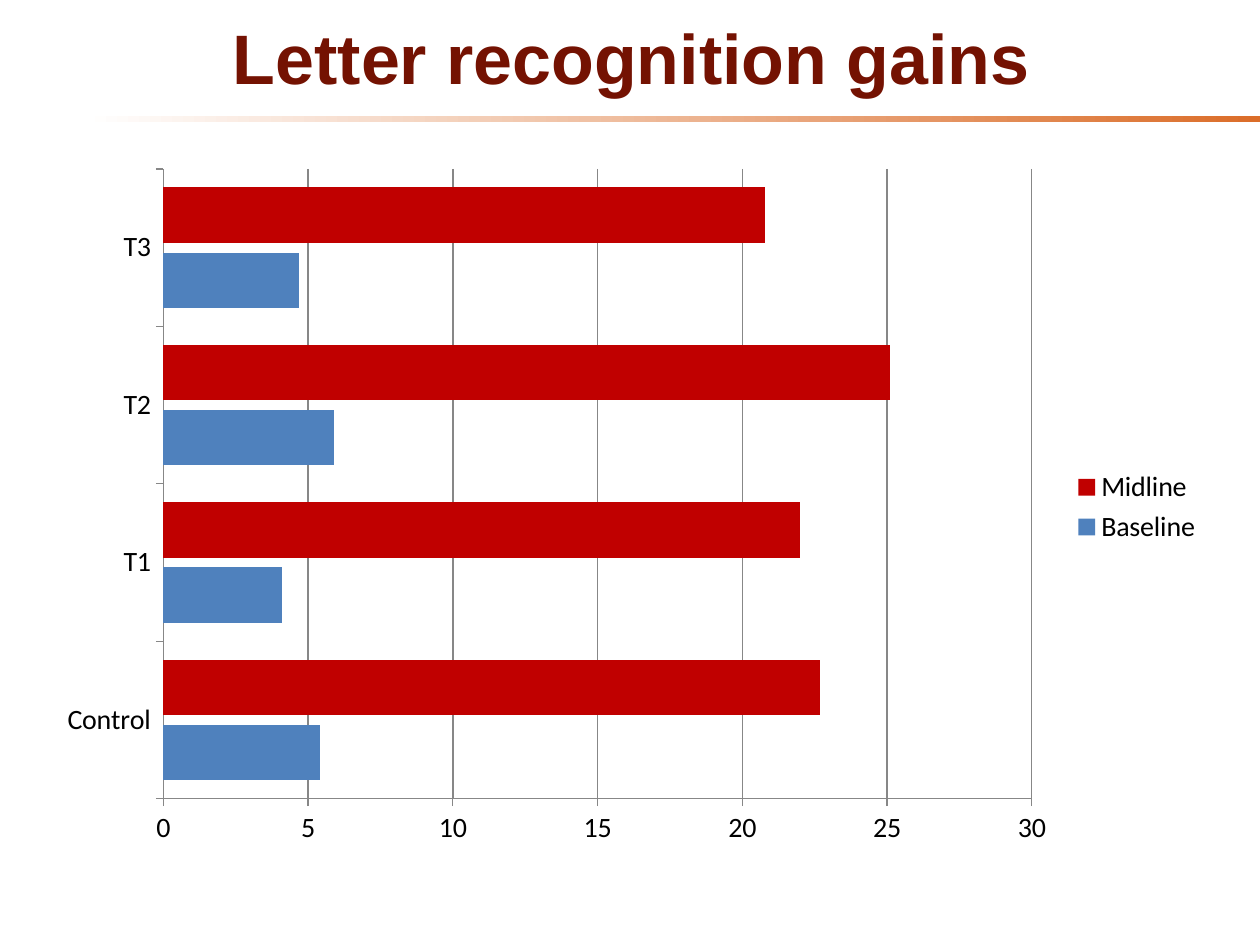
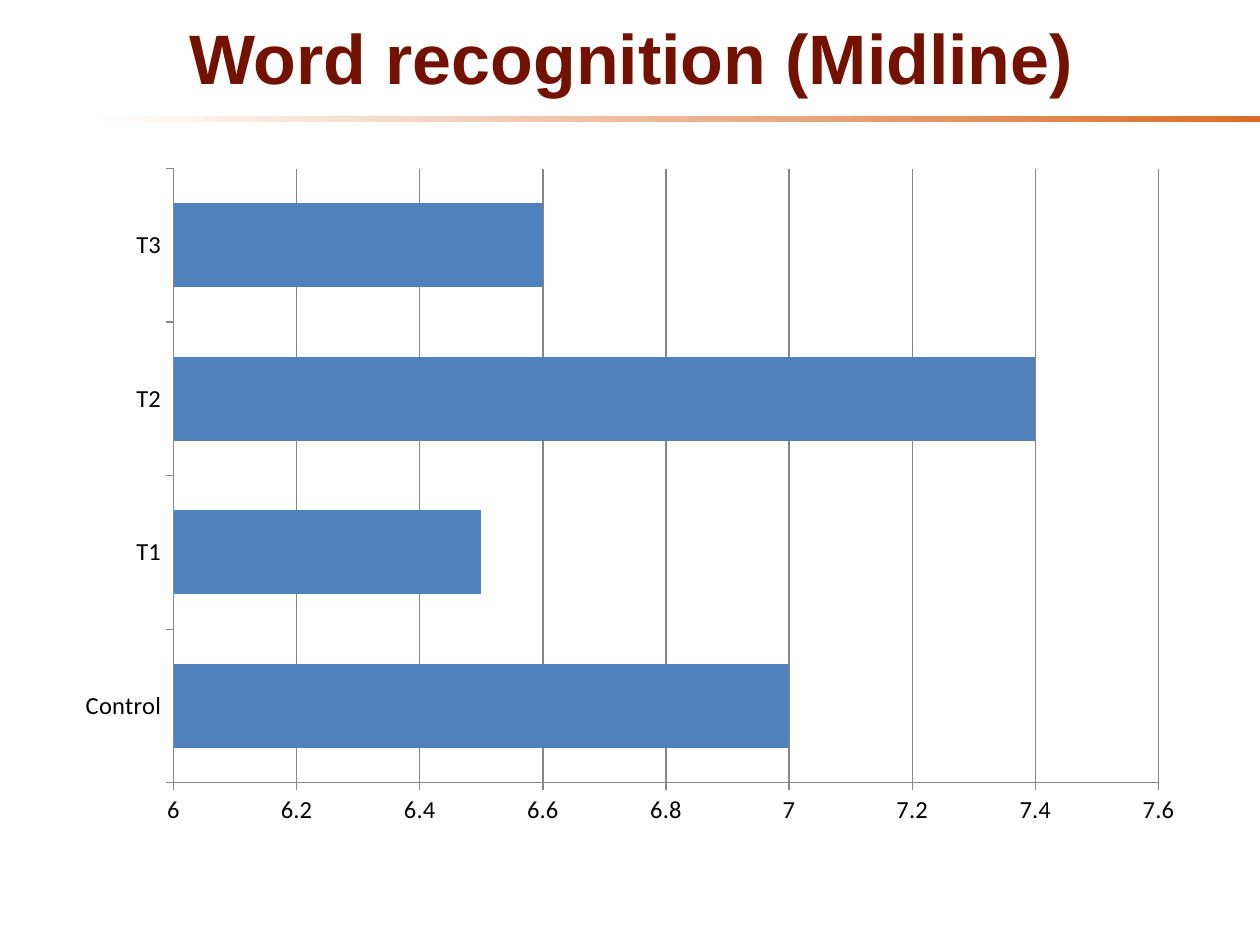
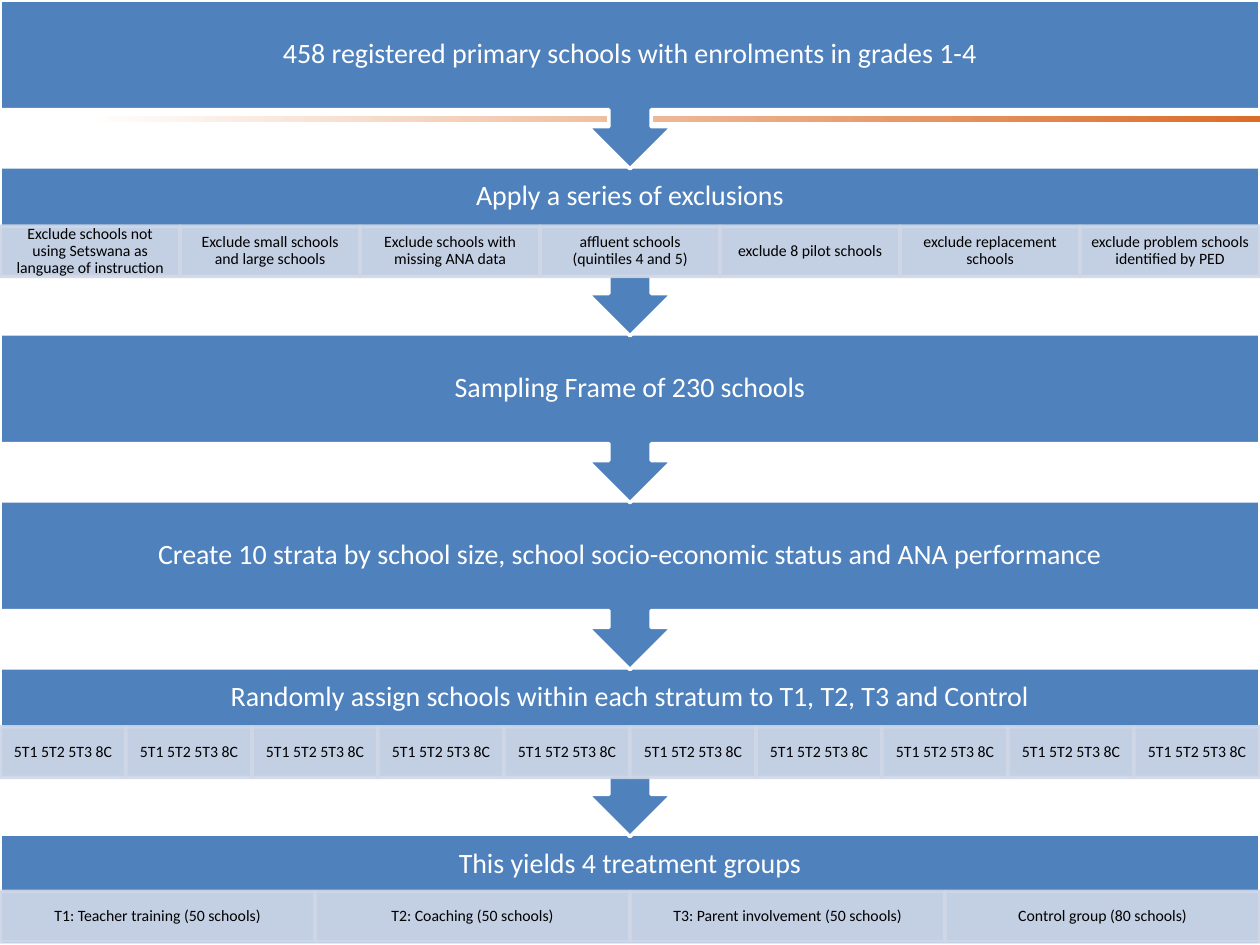
from lxml import etree
from pptx import Presentation
from pptx import util as u
from pptx.chart.data import CategoryChartData
from pptx.dml.color import RGBColor
from pptx.enum import chart as charts, shapes, text
from pptx.oxml.ns import qn

MAROON = RGBColor(0x74, 0x12, 0x02)
ORANGE = RGBColor(0xDB, 0x6D, 0x29)
BLUE = RGBColor(0x4F, 0x81, 0xBD)
PALE_BLUE = RGBColor(0xD0, 0xD8, 0xE8)
RED = RGBColor(0xC0, 0x00, 0x00)
GREY = RGBColor(0x87, 0x87, 0x87)
WHITE = RGBColor(0xFF, 0xFF, 0xFF)
BLACK = RGBColor(0x00, 0x00, 0x00)

SLIDE_WIDTH = 10
STAGE_STEP = 1.325
CALLOUT_HEIGHT = 1.34
BOX_HEIGHT = 0.87
HEADING_HEIGHT = 0.47
CELL_HEIGHT = 0.4
GROUPS = ["Control", "T1", "T2", "T3"]

STAGES = [
    ("458 registered primary schools with enrolments in grades 1-4", []),
    ("Apply a series of exclusions", [
        "Exclude schools not using Setswana as language of instruction",
        "Exclude small schools and large schools",
        "Exclude schools with missing ANA data",
        "affluent schools (quintiles 4 and 5)",
        "exclude 8 pilot schools",
        "exclude replacement schools",
        "exclude problem schools identified by PED",
    ]),
    ("Sampling Frame of 230 schools", []),
    ("Create 10 strata by school size, school socio-economic status and ANA performance", []),
    ("Randomly assign schools within each stratum to T1, T2, T3 and Control",
     ["5T1 5T2 5T3 8C"] * 10),
    ("This yields 4 treatment groups", [
        "T1: Teacher training (50 schools)",
        "T2: Coaching (50 schools)",
        "T3: Parent involvement (50 schools)",
        "Control group (80 schools)",
    ]),
]


def box(left, top, width, height):
    """Return a place in inches as lengths."""
    return [u.Inches(value) for value in (left, top, width, height)]


def write(shape, words, size, color, font="Calibri", bold=False, spacing=0.9, insets=(0.1, 0.05)):
    """Put one centred, wrapped paragraph into a shape."""
    frame = shape.text_frame
    frame.word_wrap = True
    frame.vertical_anchor = text.MSO_ANCHOR.MIDDLE
    frame.margin_left = frame.margin_right = u.Inches(insets[0])
    frame.margin_top = frame.margin_bottom = u.Inches(insets[1])
    paragraph = frame.paragraphs[0]
    paragraph.text = words
    paragraph.alignment = text.PP_ALIGN.CENTER
    paragraph.line_spacing = spacing
    paragraph.font.name = font
    paragraph.font.size = u.Pt(size)
    paragraph.font.bold = bold
    paragraph.font.color.rgb = color


def add_block(slide, kind, place, fill, line, opacity=None):
    """Add a filled and outlined shape, translucent if an opacity is given."""
    block = slide.shapes.add_shape(kind, *box(*place))
    block.shadow.inherit = False
    block.fill.solid()
    block.fill.fore_color.rgb = fill
    block.line.color.rgb = line
    block.line.width = u.Pt(2)
    if opacity:
        for color in block._element.spPr.iter(qn("a:srgbClr")):
            etree.SubElement(color, qn("a:alpha")).set("val", str(opacity * 1000))
    return block


def add_slide(deck):
    """Add a blank slide with the fading orange rule."""
    slide = deck.slides.add_slide(deck.slide_layouts[6])
    rule = slide.shapes.add_shape(shapes.MSO_SHAPE.RECTANGLE, *box(0.67, 0.92, 9.33, 0.05))
    rule.shadow.inherit = False
    rule.line.fill.background()
    rule.fill.gradient()
    rule.fill.gradient_angle = 0
    for stop, position, color in zip(rule.fill.gradient_stops, (0, 1), (WHITE, ORANGE)):
        stop.position = position
        stop.color.rgb = color
    return slide


def add_title(slide, words):
    """Add the slide title."""
    title = slide.shapes.add_textbox(*box(0.51, 0.05, 9, 0.79))
    write(title, words, 40, MAROON, font="Arial", bold=True, spacing=1.0)


def add_bars(slide, place, series, scale, size, gap, overlap):
    """Add a bar chart of the groups from (name, values, colour) series."""
    data = CategoryChartData()
    data.categories = GROUPS
    for name, values, _ in series:
        data.add_series(name, values)
    chart = slide.shapes.add_chart(charts.XL_CHART_TYPE.BAR_CLUSTERED, *box(*place), data).chart
    chart.has_title = False
    chart.font.name = "Calibri"
    chart.font.size = u.Pt(size)
    chart.font.color.rgb = BLACK
    chart.has_legend = len(series) > 1
    if chart.has_legend:
        chart.legend.position = charts.XL_LEGEND_POSITION.RIGHT
        chart.legend.include_in_layout = False
    plot = chart.plots[0]
    plot.vary_by_categories = False
    plot.gap_width = gap
    plot.overlap = overlap
    for bars, (_, _, color) in zip(plot.series, series):
        bars.format.fill.solid()
        bars.format.fill.fore_color.rgb = color
    values_axis = chart.value_axis
    values_axis.minimum_scale, values_axis.maximum_scale, values_axis.major_unit = scale
    values_axis.has_major_gridlines = True
    values_axis.major_gridlines.format.line.color.rgb = GREY
    values_axis.tick_labels.number_format = "General"
    values_axis.tick_labels.number_format_is_linked = False
    for axis in (chart.category_axis, values_axis):
        axis.major_tick_mark = charts.XL_TICK_MARK.OUTSIDE
        axis.format.line.color.rgb = GREY


def add_stage(slide, index, heading, details):
    """Add one step of the sampling flow with its row of details."""
    top = index * STAGE_STEP
    is_last = index == len(STAGES) - 1
    if is_last:
        add_block(slide, shapes.MSO_SHAPE.RECTANGLE, (0, top, SLIDE_WIDTH, BOX_HEIGHT), BLUE, WHITE)
    else:
        step = add_block(slide, shapes.MSO_SHAPE.UP_ARROW_CALLOUT,
                         (0, top, SLIDE_WIDTH, CALLOUT_HEIGHT), BLUE, WHITE)
        step.rotation = 180
    height = HEADING_HEIGHT if details else BOX_HEIGHT
    label = slide.shapes.add_textbox(*box(0, top, SLIDE_WIDTH, height))
    write(label, heading, 16, WHITE, insets=(0.12, 0.12))
    cell_top = top + (0.45 if is_last else HEADING_HEIGHT)
    for column, detail in enumerate(details):
        width = SLIDE_WIDTH / len(details)
        cell = add_block(slide, shapes.MSO_SHAPE.RECTANGLE,
                         (column * width, cell_top, width, CELL_HEIGHT), PALE_BLUE, PALE_BLUE, opacity=90)
        write(cell, detail, 9, BLACK, insets=(0.07, 0.01))


def main():
    """Build the three slides."""
    deck = Presentation()
    deck.slide_width, deck.slide_height = u.Inches(SLIDE_WIDTH), u.Inches(7.5)

    letters = add_slide(deck)
    add_title(letters, "Letter recognition gains")
    add_bars(letters, (0.35, 1.23, 9.29, 5.59),
             [("Baseline", (5.4, 4.1, 5.9, 4.7), BLUE), ("Midline", (22.7, 22, 25.1, 20.8), RED)],
             scale=(0, 30, 5), size=16, gap=67, overlap=-18)

    word_scores = add_slide(deck)
    add_title(word_scores, "Word recognition (Midline)")
    add_bars(word_scores, (0.5, 1.23, 9, 5.43), [("Series 1", (7, 6.5, 7.4, 6.6), BLUE)],
             scale=(6, 7.6, 0.2), size=14, gap=83, overlap=-19)

    sampling = add_slide(deck)
    for index, (heading, details) in reversed(list(enumerate(STAGES))):
        add_stage(sampling, index, heading, details)

    deck.save("out.pptx")


if __name__ == "__main__":
    main()
